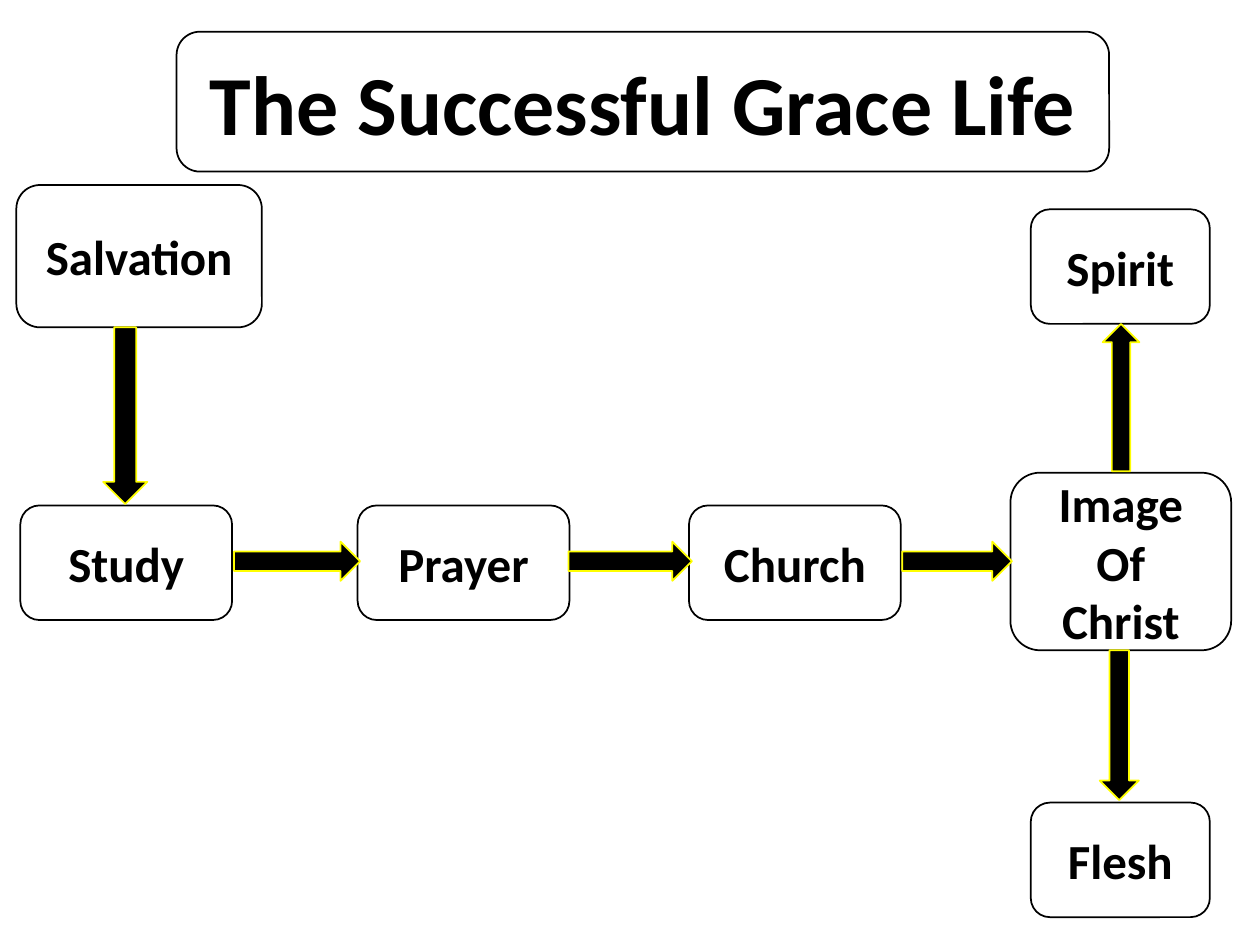
"""Build a flow chart slide of the steps of the successful grace life."""
from pptx import Presentation
from pptx import util as u
from pptx.dml.color import RGBColor
from pptx.enum import shapes, text

KINDS = shapes.MSO_SHAPE
BLACK, YELLOW = "000000", "FFFF00"

ROW_TOP, STEP_SIZE = 10.19, (4.27, 2.31)
END_LEFT, END_SIZE = 20.78, (3.61, 2.31)
ARROW_TOP, ARROW_HEIGHT = 10.92, 0.79

STEPS = [("Study", 0.41), ("Prayer", 7.21), ("Church", 13.89)]
ENDS = [("Spirit", 4.22), ("Flesh", 16.18)]
STEP_ARROWS = [(4.72, 2.54), (11.46, 2.49), (18.19, 2.21)]
VERTICAL_ARROWS = [
    (KINDS.DOWN_ARROW, (2.08, 6.6, 0.89, 3.56)),
    (KINDS.UP_ARROW, (22.23, 6.53, 0.74, 2.97)),
    (KINDS.DOWN_ARROW, (22.17, 13.11, 0.79, 3.02)),
]
BOXES = [
    ("Salvation", (0.33, 3.73, 4.95, 2.87)),
    ("Image\nOf\nChrist", (20.37, 9.53, 4.45, 3.58)),
]
BOXES += [(label, (left, ROW_TOP, *STEP_SIZE)) for label, left in STEPS]
BOXES += [(label, (END_LEFT, top, *END_SIZE)) for label, top in ENDS]
ARROWS = VERTICAL_ARROWS + [
    (KINDS.RIGHT_ARROW, (left, ARROW_TOP, width, ARROW_HEIGHT))
    for left, width in STEP_ARROWS
]


def color(value):
    return RGBColor.from_string(value)


def add_shape(slide, kind, place, line, fill=None):
    shape = slide.shapes.add_shape(kind, *map(u.Cm, place))
    shape.shadow.inherit = False
    if fill:
        shape.fill.solid()
        shape.fill.fore_color.rgb = color(fill)
    else:
        shape.fill.background()
    shape.line.color.rgb = color(line)
    shape.line.width = u.Pt(1)
    return shape


def write(shape, content, size=28, font="Calibri", ink=BLACK, bold=True):
    frame = shape.text_frame
    frame.word_wrap = True
    frame.vertical_anchor = text.MSO_ANCHOR.MIDDLE
    frame.text = content
    for paragraph in frame.paragraphs:
        paragraph.alignment = text.PP_ALIGN.CENTER
        for run in paragraph.runs:
            run.font.name = font
            run.font.size = u.Pt(size)
            run.font.bold = bold
            run.font.color.rgb = color(ink)


def main():
    presentation = Presentation()
    presentation.slide_width, presentation.slide_height = u.Cm(25.4), u.Cm(19.05)
    slide = presentation.slides.add_slide(presentation.slide_layouts[6])

    title = add_shape(slide, KINDS.ROUNDED_RECTANGLE, (3.56, 0.64, 18.8, 2.82), BLACK)
    write(title, "The Successful Grace Life", size=48)
    for label, place in BOXES:
        write(add_shape(slide, KINDS.ROUNDED_RECTANGLE, place, BLACK), label)
    for kind, place in ARROWS:
        add_shape(slide, kind, place, YELLOW, fill=BLACK)

    presentation.save("out.pptx")


if __name__ == "__main__":
    main()
